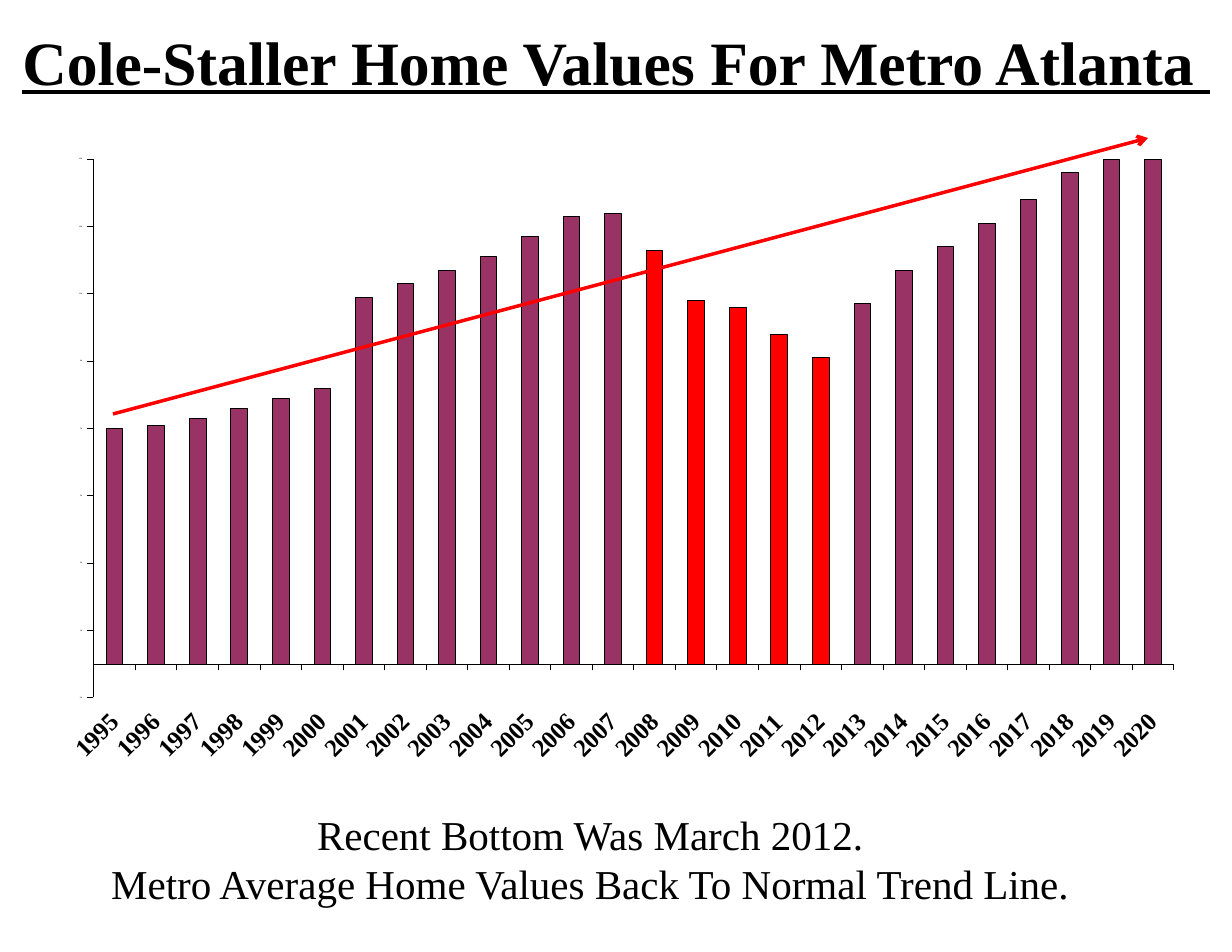
from lxml import etree
from pptx import Presentation
from pptx import util as u
from pptx.chart.data import CategoryChartData
from pptx.dml.color import RGBColor
from pptx.enum import chart as ch, shapes, text
from pptx.oxml import parse_xml
from pptx.oxml.ns import nsdecls, qn

TITLE = "Cole-Staller Home Values For Metro Atlanta "
CAPTION = "Recent Bottom Was March 2012.\vMetro Average Home Values Back To Normal Trend Line."
FIRST_YEAR = 1995
VALUES = [70, 71, 73, 76, 79, 82, 109, 113, 117, 121, 127, 133, 134,
          123, 108, 106, 98, 91, 107, 117, 124, 131, 138, 146, 152, 155]
DECLINE_YEARS = range(2008, 2013)

FONT = "Times New Roman"
BLACK = RGBColor(0, 0, 0)
PLUM = RGBColor(0x99, 0x33, 0x66)
RED = RGBColor(0xFF, 0, 0)
PLOT = {"x": 0.05, "y": 0.1, "w": 0.94, "h": 0.74}


def px(n):
    return u.Emu(round(n * 914400 / 112))


def place(sp, left, top, width, height):
    sp.left, sp.top, sp.width, sp.height = map(px, (left, top, width, height))


def style(font, size, bold=False, underline=None):
    font.name, font.size, font.bold = FONT, u.Pt(size), bold
    font.color.rgb = BLACK
    if underline is not None:
        font.underline = underline


def write(tf, words, **fmt):
    tf.word_wrap = True
    tf.auto_size = text.MSO_AUTO_SIZE.NONE
    p = tf.paragraphs[0]
    p.text = words
    p.alignment = text.PP_ALIGN.CENTER
    for r in p.runs:
        style(r.font, **fmt)


def outline(line, width):
    line.color.rgb = BLACK
    line.width = u.Pt(width)


def fix_plot_area(chart):
    """Pin the inner plot area to the fractions in PLOT."""
    area = chart._chartSpace.chart.plotArea
    for old in area.findall(qn("c:layout")):
        area.remove(old)
    sizes = "".join(f'<c:{k} val="{v}"/>' for k, v in PLOT.items())
    area.insert(0, parse_xml(
        f'<c:layout {nsdecls("c")}><c:manualLayout><c:layoutTarget val="inner"/>'
        f'<c:xMode val="edge"/><c:yMode val="edge"/>{sizes}</c:manualLayout></c:layout>'))


def add_home_values(slide):
    data = CategoryChartData()
    data.categories = [str(FIRST_YEAR + i) for i in range(len(VALUES))]
    data.add_series("Series 1", VALUES)
    chart = slide.shapes.add_chart(ch.XL_CHART_TYPE.COLUMN_CLUSTERED,
                                   px(36), px(86), px(1149), px(728), data).chart
    chart.has_legend = chart.has_title = False
    style(chart.font, 1.2, bold=True)
    fix_plot_area(chart)

    years, values = chart.category_axis, chart.value_axis
    for axis, size in ((years, 16), (values, 1.2)):
        axis.has_major_gridlines = False
        axis.major_tick_mark = ch.XL_TICK_MARK.OUTSIDE
        style(axis.tick_labels.font, size, bold=True)
        outline(axis.format.line, 0.02)
    years.tick_label_position = ch.XL_TICK_LABEL_POSITION.LOW
    years._element.find(qn("c:txPr")).find(qn("a:bodyPr")).set("rot", "-2700000")
    values.minimum_scale, values.maximum_scale, values.major_unit = -10, 150, 20

    plot = chart.plots[0]
    plot.gap_width, plot.vary_by_categories = 150, False
    series = plot.series[0]
    bars = [(series, PLUM)]
    bars += [(series.points[year - FIRST_YEAR], RED) for year in DECLINE_YEARS]
    for bar, color in bars:
        bar.format.fill.solid()
        bar.format.fill.fore_color.rgb = color
        outline(bar.format.line, 0.06)


def add_trend_arrow(slide):
    arrow = slide.shapes.add_connector(shapes.MSO_CONNECTOR.STRAIGHT,
                                       px(113), px(414), px(1148), px(138))
    arrow.line.color.rgb = RED
    arrow.line.width = u.Pt(2.25)
    etree.SubElement(arrow.line._get_or_add_ln(), qn("a:tailEnd"), type="arrow")
    etree.SubElement(arrow._element.spPr, qn("a:effectLst"))


def main():
    prs = Presentation()
    prs.slide_width, prs.slide_height = px(1232), px(952)
    slide = prs.slides.add_slide(prs.slide_layouts[5])

    add_home_values(slide)

    title = slide.shapes.title
    place(title, 0, 35, 1232, 51)
    title.text_frame.vertical_anchor = text.MSO_ANCHOR.MIDDLE
    write(title.text_frame, TITLE, size=39.6, bold=True, underline=True)

    caption = slide.shapes.add_textbox(px(31), px(804), px(1150), px(111))
    caption.text_frame.margin_right = px(42)
    write(caption.text_frame, CAPTION, size=26.4)

    add_trend_arrow(slide)
    prs.save("out.pptx")


if __name__ == "__main__":
    main()
